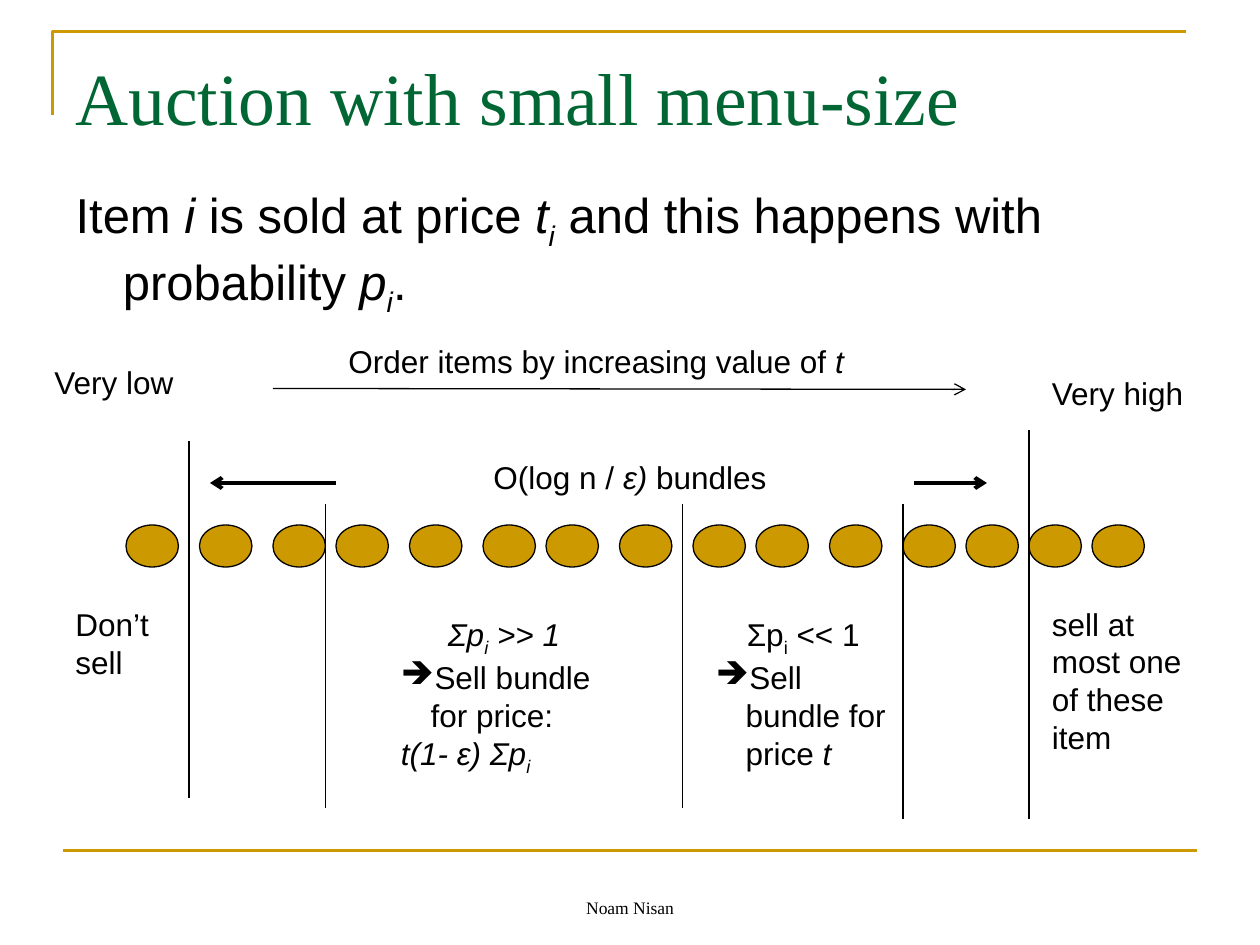
from dataclasses import dataclass
from itertools import accumulate

from lxml import etree
from pptx import Presentation
from pptx.dml.color import RGBColor
from pptx.enum.shapes import MSO_CONNECTOR, MSO_SHAPE
from pptx.enum.text import MSO_ANCHOR, MSO_AUTO_SIZE, PP_ALIGN
from pptx.oxml.ns import qn
from pptx.util import Pt

LEFT, CENTER = PP_ALIGN.LEFT, PP_ALIGN.CENTER
TOP, BOTTOM = MSO_ANCHOR.TOP, MSO_ANCHOR.BOTTOM
STRAIGHT, OVAL = MSO_CONNECTOR.STRAIGHT, MSO_SHAPE.OVAL
NO_FIT = MSO_AUTO_SIZE.NONE
GOLD = RGBColor(0xCC, 0x99, 0x00)
GREEN = RGBColor(0x00, 0x66, 0x33)
BLACK = RGBColor(0x00, 0x00, 0x00)
SANS, SERIF = "Arial", "Times New Roman"


@dataclass
class Run:
    text: str
    italic: bool = False
    sub: bool = False


@dataclass
class Para:
    runs: list[Run]
    align: PP_ALIGN = LEFT
    bullet: str = ""


@dataclass
class Label:
    x: float
    y: float
    w: float
    h: float
    paras: list[Para]
    wrap: bool = True
    size: float = 18
    font: str = SANS
    anchor: MSO_ANCHOR = TOP


@dataclass
class Line:
    x1: float
    y1: float
    x2: float
    y2: float
    width: float = 0.75
    color: RGBColor = BLACK
    arrow: bool = False


def set_indent(p, hang: float, bullet: str = "") -> None:
    pPr = p._p.get_or_add_pPr()
    pPr.set("marL", str(Pt(hang)))
    pPr.set("indent", str(-Pt(hang)))
    if bullet:
        etree.SubElement(pPr, qn("a:buChar")).set("char", bullet)
    else:
        etree.SubElement(pPr, qn("a:buNone"))


def add_runs(p, runs: list[Run], size: float, font: str, color: RGBColor) -> None:
    for run in runs:
        r = p.add_run()
        r.text = run.text
        r.font.size, r.font.name = Pt(size), font
        r.font.italic = run.italic
        r.font.color.rgb = color
        if run.sub:
            r._r.get_or_add_rPr().set("baseline", "-25000")


def add_label(s, label: Label) -> None:
    tf = s.shapes.add_textbox(Pt(label.x), Pt(label.y), Pt(label.w), Pt(label.h)).text_frame
    tf.word_wrap = label.wrap
    tf.vertical_anchor = label.anchor
    for i, para in enumerate(label.paras):
        p = tf.paragraphs[0] if i == 0 else tf.add_paragraph()
        p.alignment = para.align
        if para.bullet:
            set_indent(p, 17, para.bullet)
        add_runs(p, para.runs, label.size, label.font, BLACK)


def add_line(s, line: Line) -> None:
    c = s.shapes.add_connector(STRAIGHT, Pt(line.x1), Pt(line.y1), Pt(line.x2), Pt(line.y2))
    c.line.color.rgb, c.line.width = line.color, Pt(line.width)
    if line.arrow:
        etree.SubElement(c.line._get_or_add_ln(), qn("a:tailEnd")).set("type", "arrow")
    etree.SubElement(c._element.spPr, qn("a:effectLst"))


def add_item(s, x: float) -> None:
    sp = s.shapes.add_shape(OVAL, Pt(x), Pt(300), Pt(30), Pt(24))
    sp.shadow.inherit = False
    sp.fill.solid()
    sp.fill.fore_color.rgb = GOLD
    sp.line.color.rgb, sp.line.width = BLACK, Pt(0.75)


def fill_placeholder(sp, box: tuple, runs: list[Run], size: float, font: str, color: RGBColor):
    sp.left, sp.top, sp.width, sp.height = (Pt(v) for v in box)
    tf = sp.text_frame
    tf.word_wrap, tf.auto_size, tf.vertical_anchor = True, NO_FIT, TOP
    p = tf.paragraphs[0]
    p.alignment = LEFT
    add_runs(p, runs, size, font, color)
    return tf


def add_frame(s) -> None:
    fb = s.shapes.build_freeform(Pt(30), Pt(66))
    fb.add_line_segments([(Pt(30), Pt(18)), (Pt(678), Pt(18))], close=False)
    sp = fb.convert_to_shape()
    sp.shadow.inherit = False
    sp.fill.background()
    sp.line.color.rgb, sp.line.width = GOLD, Pt(1.5)
    add_line(s, Line(36, 486, 684, 486, 1.5, GOLD))


I_SUB = Run("i", True, True)
BODY = [Run("Item "), Run("i", True), Run(" is sold at price "), Run("t", True), I_SUB,
        Run(" and this happens with probability "), Run("p", True), I_SUB, Run(".")]

# Items sit in groups of three, with the last ones closer together
ITEM_STEPS = [42, 42, 36] * 4 + [36, 36]

LINES = [
    # Bundle borders
    Line(108, 252, 108, 456),
    Line(186, 288, 186, 462),
    Line(390, 288, 390, 462),
    Line(516, 288, 516, 468),
    Line(588, 246, 588, 468),
    # Arrows
    Line(522, 276, 564, 276, 2.25, arrow=True),
    Line(192, 276, 120, 276, 2.25, arrow=True),
    Line(156, 222, 552, 222.5, arrow=True),
]

LABELS = [
    Label(36, 342, 66, 51, [Para([Run("Don’t sell")])]),
    Label(594, 342, 90, 94, [Para([Run("sell at most one of these")]), Para([Run("item")])]),
    Label(192, 258, 336, 29,
          [Para([Run("O(log n / "), Run("ε) ", True), Run("bundles")], CENTER)]),
    Label(222, 348, 132, 94, [
        Para([Run("Σp", True), I_SUB, Run(" >> 1", True)], CENTER),
        Para([Run("Sell bundle for price:")], bullet="➔"),
        Para([Run("t(1- ε) Σp", True), I_SUB])]),
    Label(402, 348, 114, 94, [
        Para([Run("Σp"), Run("i", sub=True), Run(" << 1")], CENTER),
        Para([Run("Sell bundle for price "), Run("t", True)], bullet="➔")]),
    Label(192, 192, 300, 29,
          [Para([Run("Order items by increasing value of "), Run("t", True)])], wrap=False),
    Label(594, 210, 90, 29, [Para([Run("Very high")])], wrap=False),
    Label(24, 204, 83.5, 29, [Para([Run("Very low")])], wrap=False),
    # Footer
    Label(246, 492, 228, 36, [Para([Run("Noam Nisan")], CENTER)],
          size=10, font=SERIF, anchor=BOTTOM),
]


def main() -> None:
    prs = Presentation()
    prs.slide_width, prs.slide_height = Pt(720), Pt(540)
    s = prs.slides.add_slide(prs.slide_layouts[1])

    # Title and statement
    tf = fill_placeholder(s.shapes.title, (36, 21.5, 648, 90),
                          [Run("Auction with small menu-size")], 42, SERIF, GREEN)
    tf.margin_top = Pt(8)
    tf = fill_placeholder(s.placeholders[1], (36, 102, 648, 381), BODY, 28, SANS, BLACK)
    set_indent(tf.paragraphs[0], 27)

    # Frame and diagram
    add_frame(s)
    for x in accumulate(ITEM_STEPS, initial=72):
        add_item(s, x)
    for line in LINES:
        add_line(s, line)
    for label in LABELS:
        add_label(s, label)

    prs.save("out.pptx")


if __name__ == "__main__":
    main()
